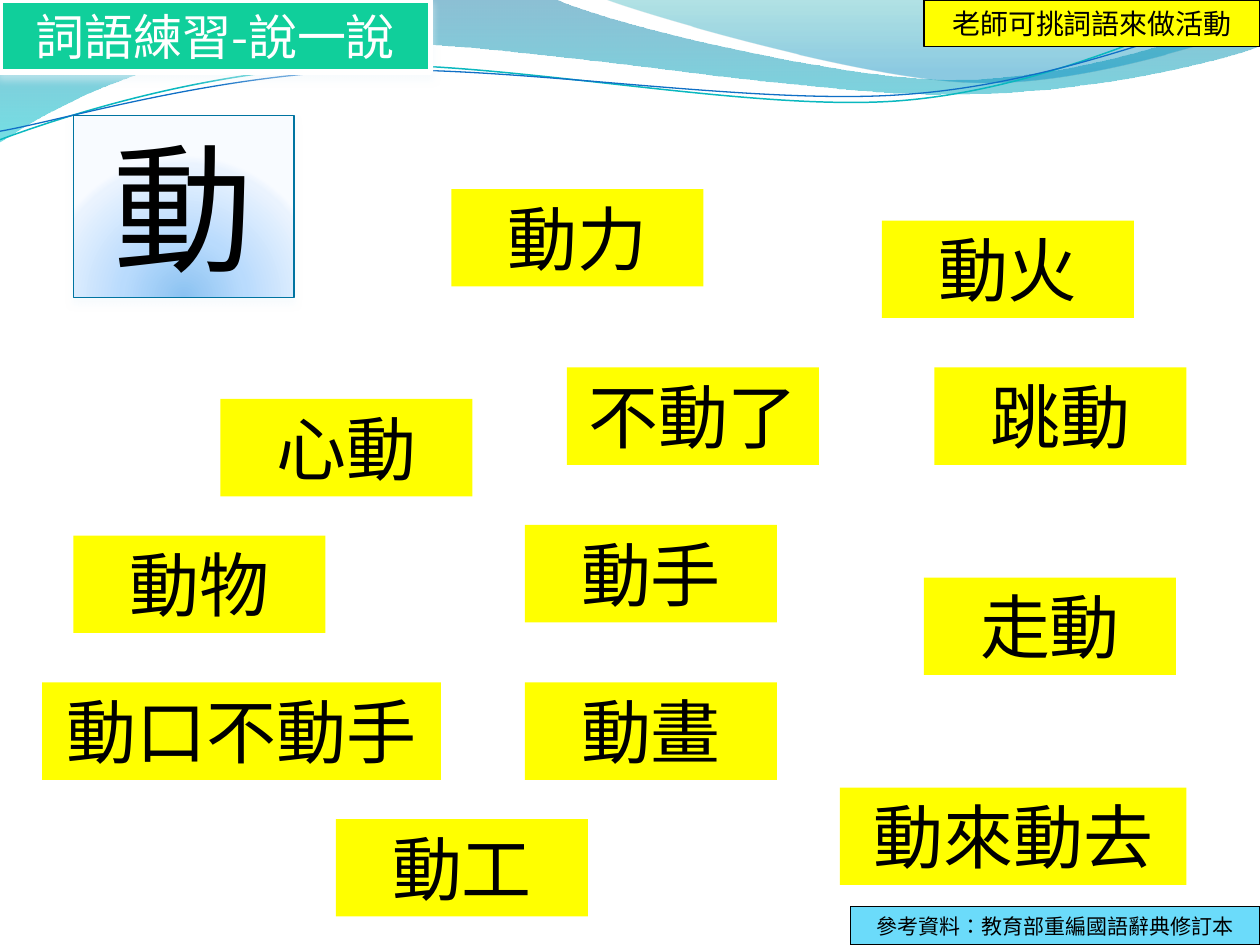
from lxml import etree
from pptx import Presentation
from pptx.dml.color import RGBColor
from pptx.enum.shapes import MSO_SHAPE
from pptx.enum.text import MSO_ANCHOR, MSO_AUTO_SIZE, PP_ALIGN
from pptx.oxml import parse_xml
from pptx.oxml.ns import nsdecls, qn
from pptx.util import Pt

RECT = MSO_SHAPE.RECTANGLE
CENTER = PP_ALIGN.CENTER
TOP = MSO_ANCHOR.TOP
GROW = MSO_AUTO_SIZE.SHAPE_TO_FIT_TEXT

FONT = "Noto Sans CJK SC"
BLACK = RGBColor(0x00, 0x00, 0x00)
WHITE = RGBColor(0xFF, 0xFF, 0xFF)
YELLOW = RGBColor(0xFF, 0xFF, 0x00)
GREEN = RGBColor(0x10, 0xCF, 0x9B)
SKY = RGBColor(0x6B, 0xDB, 0xFA)
BLUE = RGBColor(0x00, 0x74, 0xA1)
TEAL = RGBColor(0x0A, 0xB8, 0xBF)
ROYAL = RGBColor(0x0F, 0x6F, 0xC6)
CYAN = RGBColor(0x00, 0xC6, 0xCF)
SEA = RGBColor(0x00, 0xA1, 0xA9)
OCEAN = RGBColor(0x00, 0x8B, 0xBF)
MIST = RGBColor(0xF0, 0xF8, 0xFC)
GLOW = [
    (0, RGBColor(0x8B, 0xC2, 0xF1), 100),
    (43, RGBColor(0xB9, 0xDB, 0xFD), 100),
    (93, RGBColor(0xEA, 0xF3, 0xFE), 100),
    (100, RGBColor(0xF8, 0xFB, 0xFF), 100),
]
DOWN = '<a:lin ang="5400000" scaled="1"/>'
ROUND = ('<a:path path="circle"><a:fillToRect l="50000" t="130000" '
         'r="50000" b="-30000"/></a:path>')
TILT = -2.7

# Curves: a start point, then (x, y) for a line or six numbers for a Bezier
BAND = [(0, 0), (316.8, -0.7),
        (342.7, 12.2, 478.1, 45.4, 545.8, 45.4),
        (614.2, 45.4, 689.8, 18.7, 720, 6.5), (720.7, 25.9),
        (707.8, 31.7, 626.4, 54.7, 537.1, 54),
        (447.8, 54, 275, 20.2, 185, 24.5),
        (92.9, 25.9, 33.1, 59.8, -0.7, 81.4), (0, 0)]
WEDGE = [(344.9, -0.7),
         (366.5, 7.9, 491, 44.6, 553.7, 46.8),
         (616.3, 49.7, 691.9, 23, 720, 15.1), (720, 0), (344.9, -0.7)]
# These two are turned by TILT once drawn
UPPER = [(-1.4, 62.9),
         (33.8, 51.7, 114.1, 29.4, 199.8, 29.9),
         (284.9, 30.3, 425.8, 67.3, 512.4, 64.9),
         (599, 62.4, 676.4, 25.7, 720.2, 15.5)]
LOWER = [(-1.1, 58),
         (32.9, 53.8, 118.3, 32.5, 204.1, 33),
         (290.6, 33.4, 428.9, 63.8, 515.5, 61.4),
         (601.3, 59.6, 678.5, 30.1, 721.4, 21.3)]

# Word, left, top, width
WORDS = [
    ("動畫", 300, 390, 144), ("動力", 258, 108, 144),
    ("跳動", 534, 210, 144), ("動物", 42, 306, 144),
    ("動來動去", 480, 450, 198), ("動手", 300, 300, 144),
    ("走動", 528, 330, 144), ("不動了", 324, 210, 144),
    ("心動", 126, 228, 144), ("動工", 192, 468, 144),
    ("動火", 504, 126, 144), ("動口不動手", 24, 390, 228),
]


def shade(shape, stops, course):
    """Fill with a gradient of (position, colour, opacity) stops."""
    shape.fill.solid()
    marks = "".join(
        f'<a:gs pos="{pos * 1000}"><a:srgbClr val="{color}">'
        f'<a:alpha val="{alpha * 1000}"/></a:srgbClr></a:gs>'
        for pos, color, alpha in stops)
    props = shape._element.spPr
    props.replace(props.find(qn("a:solidFill")), parse_xml(
        f'<a:gradFill {nsdecls("a")} rotWithShape="1">'
        f'<a:gsLst>{marks}</a:gsLst>{course}</a:gradFill>'))


def cast(shape):
    """Add a soft, pale shadow below the shape."""
    effects = shape._element.spPr.find(qn("a:effectLst"))
    effects.append(parse_xml(
        f'<a:outerShdw {nsdecls("a")} blurRad="{Pt(4.5)}" dist="{Pt(3)}" '
        f'dir="5400000" rotWithShape="0"><a:srgbClr val="{MIST}">'
        f'<a:alpha val="48000"/></a:srgbClr></a:outerShdw>'))


def outline(shape, color, width):
    if color is None:
        shape.line.fill.background()
    else:
        shape.line.color.rgb = color
        shape.line.width = Pt(width)


def bend(shape, curve):
    """Join each run of three straight segments that forms a Bezier."""
    lines = iter(list(shape._element.iter(qn("a:lnTo"))))
    for part in curve[1:]:
        first = next(lines)
        if len(part) == 2:
            continue
        arc = etree.Element(qn("a:cubicBezTo"))
        first.addprevious(arc)
        for line in (first, next(lines), next(lines)):
            arc.append(line[0])
            line.getparent().remove(line)


def ribbon(shapes, curve, stops=None, line=None, width=0.75, turn=0):
    points = [(Pt(part[i]), Pt(part[i + 1]))
              for part in curve for i in range(0, len(part), 2)]
    pen = shapes.build_freeform(*points[0])
    pen.add_line_segments(points[1:], close=stops is not None)
    shape = pen.convert_to_shape()
    bend(shape, curve)
    shape.rotation = turn
    shape.shadow.inherit = False
    if stops:
        shade(shape, stops, DOWN)
    else:
        shape.fill.background()
    outline(shape, line, width)


def write(shape, text, size=40, color=BLACK):
    frame = shape.text_frame
    frame.word_wrap = True
    frame.auto_size = GROW
    frame.vertical_anchor = TOP
    para = frame.paragraphs[0]
    para.alignment = CENTER
    run = para.add_run()
    run.text = text
    run.font.size = Pt(size)
    run.font.color.rgb = color
    run.font.name = FONT
    props = run.font._element
    props.set("lang", "zh-TW")
    etree.SubElement(props, qn("a:ea"), typeface=FONT)


def card(slide, box, text, fill=YELLOW, line=None, width=0.75, **style):
    shape = slide.shapes.add_shape(RECT, *map(Pt, box))
    shape.shadow.inherit = False
    shape.fill.solid()
    shape.fill.fore_color.rgb = fill
    outline(shape, line, width)
    write(shape, text, **style)
    return shape


def waves(slide):
    ribbon(slide.shapes, BAND, [(0, BLUE, 45), (100, CYAN, 55)])
    ribbon(slide.shapes, WEDGE, [(0, SEA, 30), (80, OCEAN, 45)])
    pair = slide.shapes.add_group_shape()
    ribbon(pair.shapes, UPPER, line=TEAL, width=0.85, turn=TILT)
    ribbon(pair.shapes, LOWER, line=ROYAL, turn=TILT)


def words(slide):
    for text, left, top, width in WORDS:
        card(slide, (left, top, width, 55.7), text)


def labels(slide):
    key = card(slide, (42, 66, 126, 104.2), "動", line=BLUE, size=80)
    shade(key, GLOW, ROUND)
    cast(key)
    title = card(slide, (0, 0, 246, 41.2), "詞語練習-說一說", fill=GREEN,
                 line=WHITE, width=3, size=28, color=WHITE)
    cast(title)
    card(slide, (528, 0, 192, 26.6), "老師可挑詞語來做活動",
         line=BLACK, size=16)
    card(slide, (486, 518.2, 234, 21.8), "參考資料：教育部重編國語辭典修訂本",
         fill=SKY, line=BLACK, size=12)


def main():
    deck = Presentation()
    deck.slide_width, deck.slide_height = Pt(720), Pt(540)
    slide = deck.slides.add_slide(deck.slide_layouts[6])
    waves(slide)
    words(slide)
    labels(slide)
    deck.save("out.pptx")


if __name__ == "__main__":
    main()
